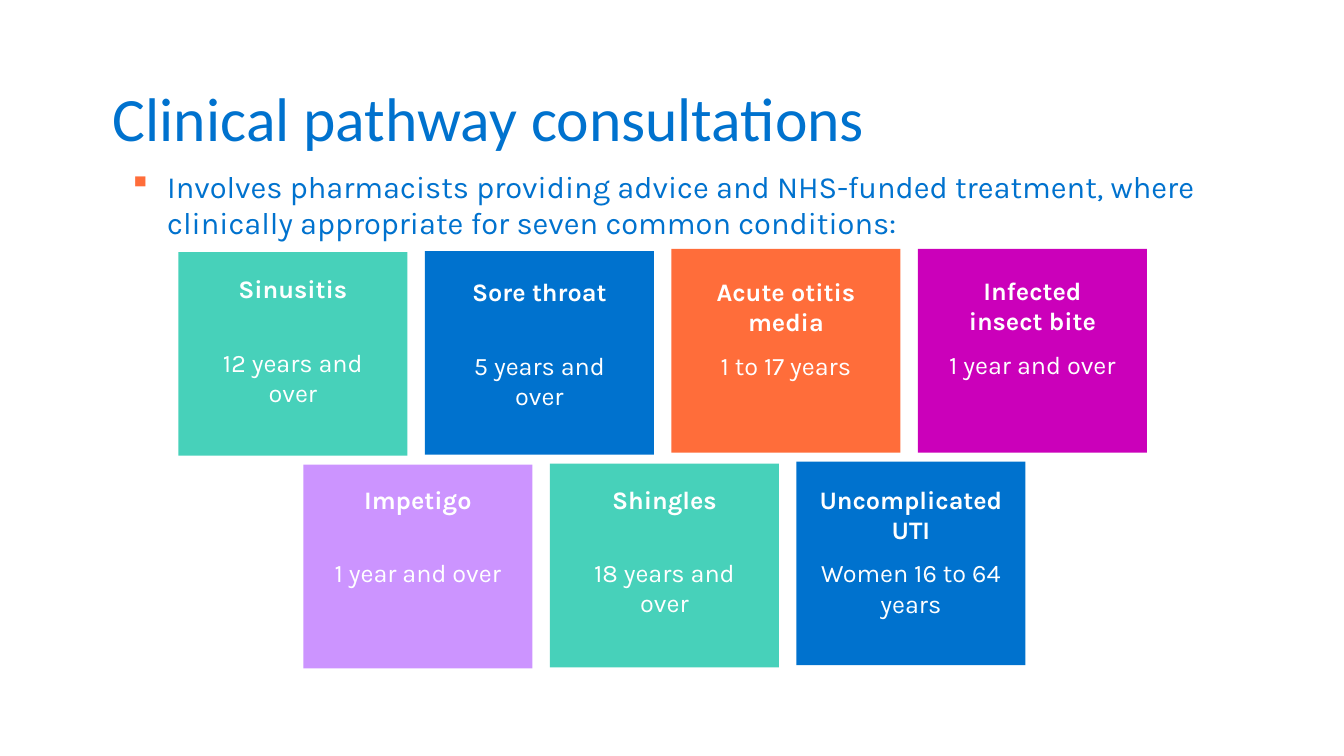
from lxml.etree import SubElement
from pptx import Presentation
from pptx.dml.color import RGBColor
from pptx.enum.shapes import MSO_SHAPE as Shape
from pptx.enum.text import MSO_ANCHOR as Anchor, MSO_AUTO_SIZE as AutoSize, PP_ALIGN as Align
from pptx.oxml.ns import qn
from pptx.util import Inches, Pt

BLUE = RGBColor(0x00, 0x72, 0xCE)
TEAL = RGBColor(0x47, 0xD1, 0xBA)
ORANGE = RGBColor(0xFF, 0x6D, 0x3A)
MAGENTA = RGBColor(0xCB, 0x00, 0xBA)
LILAC = RGBColor(0xCC, 0x94, 0xFF)
WHITE = RGBColor(0xFF, 0xFF, 0xFF)

HEADING = "Clinical pathway consultations"
INTRO = ("Involves pharmacists providing advice and NHS-funded treatment, where "
         "clinically appropriate for seven common conditions:")

# condition, ages, fill, card top, text inset at top, text inset at sides, lines in condition
ROWS = [
    (1.77, [
        ("Sinusitis", "12 years and over", TEAL, 2.5, 0.21, 0.27, 1),
        ("Sore throat", "5 years and over", BLUE, 2.49, 0.25, 0.27, 1),
        ("Acute otitis media", "1 to 17 years", ORANGE, 2.47, 0.27, 0.27, 2),
        ("Infected insect bite", "1 year and over", MAGENTA, 2.47, 0.26, 0.27, 2),
    ]),
    (3.01, [
        ("Impetigo", "1 year and over", LILAC, 4.61, 0.19, 0.27, 1),
        ("Shingles", "18 years and over", TEAL, 4.6, 0.2, 0.27, 1),
        ("Uncomplicated UTI", "Women 16 to 64 years", BLUE, 4.58, 0.22, 0.19, 2),
    ]),
]
CARD_WIDTH, CARD_HEIGHT, CARD_PITCH = 2.27, 2.02, 2.445
AGES_GAP = {1: Pt(31), 2: Pt(9.5)}


def add_run(paragraph, text, font, size, color, bold=False):
    run = paragraph.add_run()
    run.text = text
    run.font.name = font
    run.font.size = Pt(size)
    run.font.color.rgb = color
    run.font.bold = bold


def add_bullet(paragraph, symbol, color, indent):
    properties = paragraph._p.get_or_add_pPr()
    properties.set("marL", str(indent))
    properties.set("indent", str(-indent))
    bullet_color = SubElement(properties, qn("a:buClr"))
    SubElement(bullet_color, qn("a:srgbClr"), val=str(color))
    SubElement(properties, qn("a:buChar"), char=symbol)


def add_card(slide, left, condition, ages, fill, top, inset_top, inset_side, lines):
    card = slide.shapes.add_shape(Shape.RECTANGLE, Inches(left), Inches(top),
                                  Inches(CARD_WIDTH), Inches(CARD_HEIGHT))
    card.shadow.inherit = False
    card.fill.solid()
    card.fill.fore_color.rgb = fill
    card.line.fill.background()
    frame = card.text_frame
    frame.word_wrap = True
    frame.vertical_anchor = Anchor.TOP
    frame.margin_top = Inches(inset_top)
    frame.margin_left = frame.margin_right = Inches(inset_side)
    name_line, ages_line = frame.paragraphs[0], frame.add_paragraph()
    name_line.alignment = ages_line.alignment = Align.CENTER
    ages_line.space_before = AGES_GAP[lines]
    add_run(name_line, condition, "Karla", 18, WHITE, bold=True)
    add_run(ages_line, ages, "Karla", 18, WHITE)


def main():
    deck = Presentation()
    deck.slide_width, deck.slide_height = Inches(13.33), Inches(7.5)
    slide = deck.slides.add_slide(deck.slide_layouts[5])

    title = slide.shapes.title
    title.left, title.top = Inches(1.02), Inches(0.4)
    title.width, title.height = Inches(11.39), Inches(1.45)
    title.text_frame.auto_size = AutoSize.NONE
    title.text_frame.vertical_anchor = Anchor.MIDDLE
    heading = title.text_frame.paragraphs[0]
    heading.alignment = Align.LEFT
    heading.line_spacing = 1.1
    add_run(heading, HEADING, "Calibri", 44, BLUE)

    for row_left, cards in ROWS:
        for column, card in enumerate(cards):
            add_card(slide, row_left + column * CARD_PITCH, *card)

    intro = slide.shapes.add_textbox(Inches(1.18), Inches(1.61), Inches(11.39), Inches(0.85))
    intro.text_frame.word_wrap = True
    sentence = intro.text_frame.paragraphs[0]
    add_bullet(sentence, "▪", ORANGE, Inches(0.38))
    add_run(sentence, INTRO, "Karla", 22, BLUE)

    deck.save("out.pptx")


if __name__ == "__main__":
    main()
